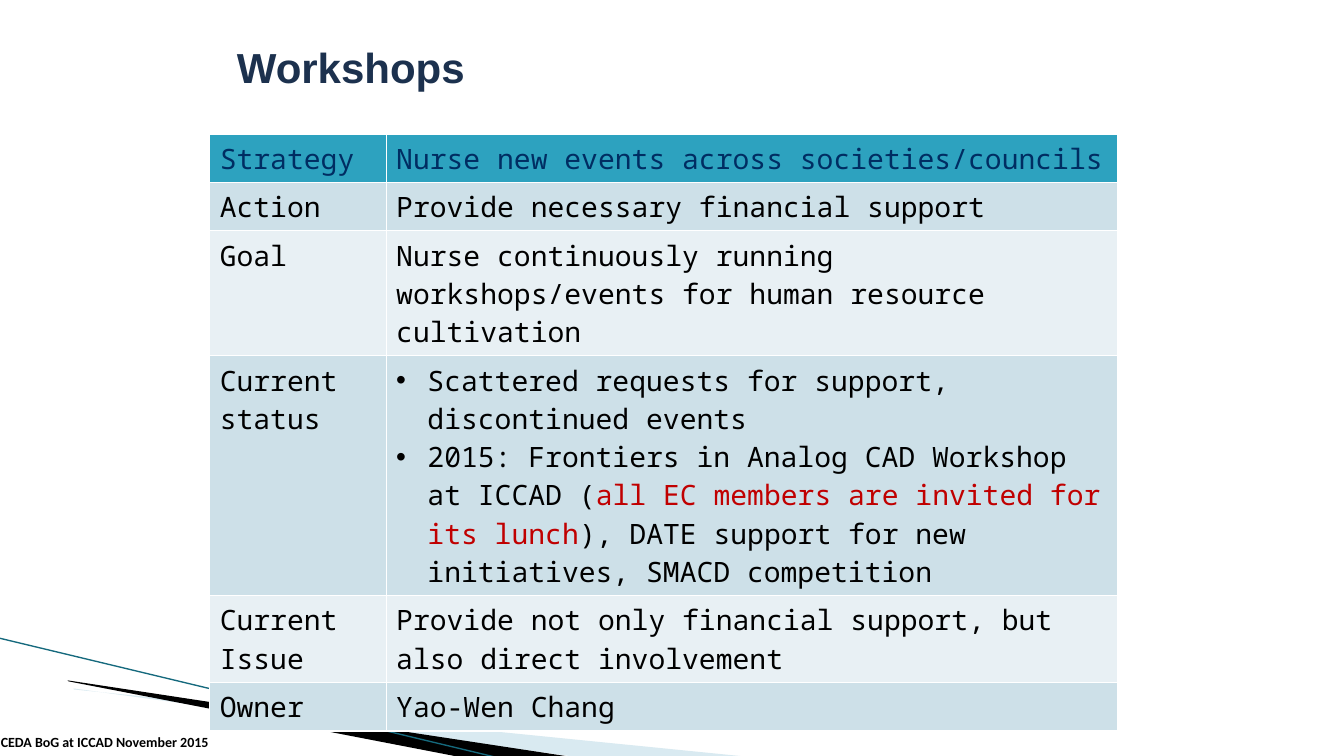
from lxml import etree
from pptx import Presentation
from pptx.dml.color import RGBColor
from pptx.enum.shapes import MSO_CONNECTOR
from pptx.enum.text import MSO_ANCHOR, PP_ALIGN
from pptx.oxml.ns import qn
from pptx.util import Pt

PX = 9144  # 100 px to the inch
LEFT = PP_ALIGN.LEFT
MID, LOW = MSO_ANCHOR.MIDDLE, MSO_ANCHOR.BOTTOM
LINE = MSO_CONNECTOR.STRAIGHT
HEX = {
    "navy": "1C314E", "head": "002D62", "teal": "2DA2BF", "dark": "CDE0E8",
    "pale": "E8F0F4", "red": "C00000", "black": "000000", "white": "FFFFFF",
    "mist": "A0CBDC", "edge": "15697D",
}


def color(name):
    return RGBColor.from_string(HEX[name])


def write(para, text, size, face, tint, bold=False):
    run = para.add_run()
    run.text = text
    for key, val in {"size": Pt(size), "name": face, "bold": bold}.items():
        setattr(run.font, key, val)
    run.font.color.rgb = color(tint)


prs = Presentation()
prs.slide_width, prs.slide_height = 1333 * PX, 750 * PX
slide = prs.slides.add_slide(prs.slide_layouts[5])
shapes = slide.shapes

# Corner wedges and line
wedges = [
    ("mist", 40, [(73, 684), (744, 751), (572, 751), (73, 683)]),
    ("black", 100, [(67, 675), (567, 751), (461, 752), (68, 676)]),
]
for tint, alpha, dots in wedges:
    form = shapes.build_freeform(*dots[0], scale=PX)
    form.add_line_segments(dots[1:], close=True)
    wedge = form.convert_to_shape()
    wedge.shadow.inherit = False
    wedge.fill.solid()
    wedge.fill.fore_color.rgb = color(tint)
    wedge.line.fill.background()
    if alpha < 100:
        clr = wedge.fill._xPr.find(qn("a:solidFill"))[0]
        etree.SubElement(clr, qn("a:alpha"), val=str(alpha * 1000))

edge = shapes.add_connector(LINE, -1 * PX, 633 * PX, 495 * PX, 752 * PX)
edge.line.color.rgb = color("edge")
edge.line.width = Pt(0.95)
etree.SubElement(edge._element.spPr, qn("a:effectLst"))

# Title
title = shapes.title
title.left, title.top, title.width, title.height = (
    n * PX for n in (225, 16, 860, 100))
title.text_frame.vertical_anchor = MID
para = title.text_frame.paragraphs[0]
para.alignment = LEFT
write(para, "Workshops", 30, "Arial", "navy", True)

# Strategy table: each cell is a list of paragraphs, each a list of runs
rows = [
    (43, "Strategy", [["Nurse new events across societies/councils"]]),
    (43, "Action", [["Provide necessary financial support"]]),
    (79, "Goal", [["Nurse continuously running workshops/events "
                   "for human resource cultivation"]]),
    (210, "Current status", [
        ["Scattered requests for support, discontinued events"],
        ["2015: Frontiers in Analog CAD Workshop at ICCAD (",
         "all EC members are invited for its lunch",
         "), DATE support for new initiatives, SMACD competition"]]),
    (77, "Current Issue", [["Provide not only financial support, "
                            "but also direct involvement"]]),
    (43, "Owner", [["Yao-Wen Chang"]]),
]
high = sum(row[0] for row in rows)
table = shapes.add_table(
    len(rows), 2, 208 * PX, 133 * PX, 900 * PX, high * PX).table
table.first_row = table.horz_banding = False
table.columns[0].width, table.columns[1].width = 175 * PX, 725 * PX

for i, (tall, label, body) in enumerate(rows):
    table.rows[i].height = tall * PX
    fill = "teal" if i == 0 else ("pale", "dark")[i % 2]
    for j, paras in enumerate(([[label]], body)):
        cell = table.cell(i, j)
        props = cell._tc.get_or_add_tcPr()
        for side in ("lnL", "lnR", "lnT", "lnB"):
            rule = etree.SubElement(props, qn("a:" + side), w=str(Pt(1)))
            ink = etree.SubElement(rule, qn("a:solidFill"))
            etree.SubElement(ink, qn("a:srgbClr"), val=HEX["white"])
        cell.fill.solid()
        cell.fill.fore_color.rgb = color(fill)
        frame = cell.text_frame
        for k, runs in enumerate(paras):
            para = frame.add_paragraph() if k else frame.paragraphs[0]
            if len(paras) > 1:
                form = para._p.get_or_add_pPr()
                form.set("marL", str(31 * PX))
                form.set("indent", str(-31 * PX))
                etree.SubElement(form, qn("a:buFont"), typeface="Arial")
                etree.SubElement(form, qn("a:buChar"), char="•")
            for n, text in enumerate(runs):
                tint = "head" if i == 0 else ("black", "red")[n % 2]
                write(para, text, 20, "Noto Sans Mono", tint)

# Footer
foot = shapes.add_textbox(-9 * PX, 725 * PX, 343 * PX, 24 * PX).text_frame
foot.word_wrap = True
foot.vertical_anchor = LOW
write(foot.paragraphs[0], "CEDA BoG at ICCAD November 2015",
      10, "Calibri", "black", True)

prs.save("out.pptx")
